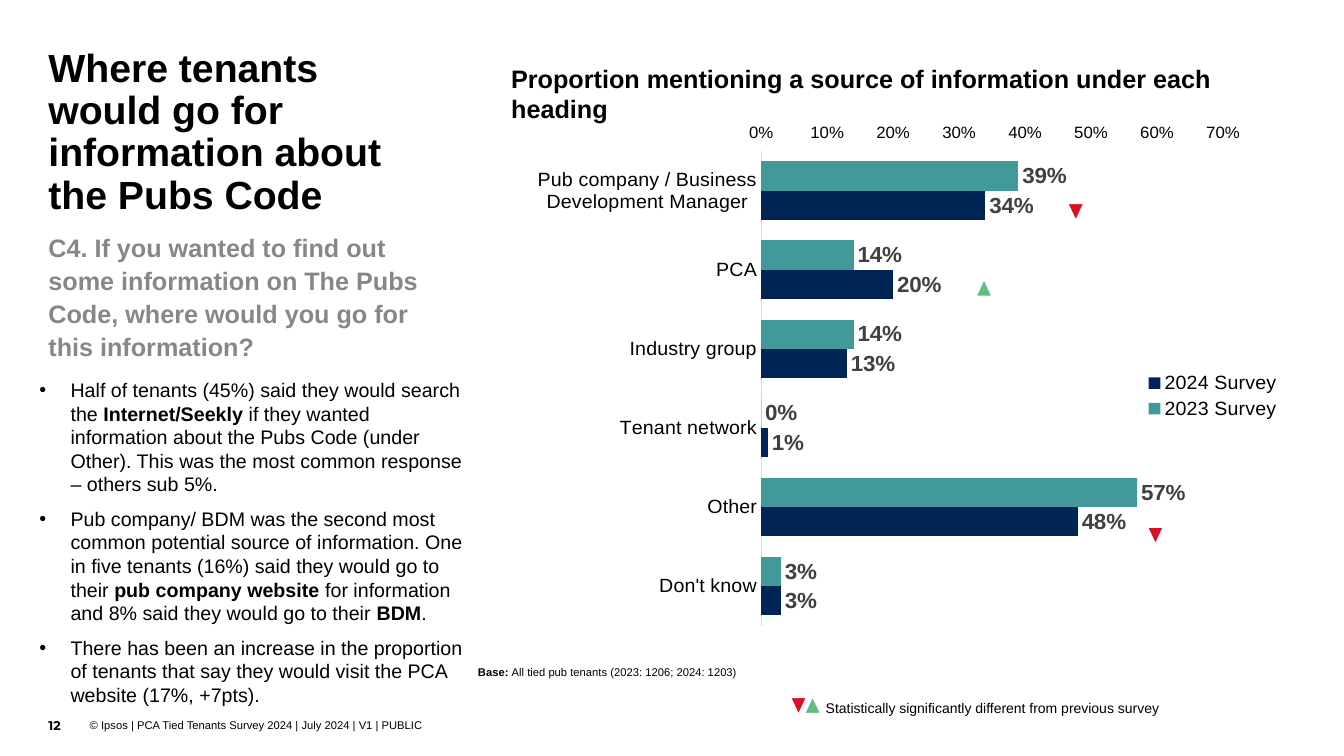
from dataclasses import dataclass

from lxml import etree
from pptx import Presentation
from pptx import util as u
from pptx.chart.chart import Chart
from pptx.chart.data import CategoryChartData
from pptx.dml.color import RGBColor
from pptx.enum import chart as charts, shapes, text
from pptx.oxml import parse_xml
from pptx.oxml.ns import nsdecls, qn
from pptx.slide import Slide


@dataclass(frozen=True)
class Theme:
    font: str = "Arial"
    number_font: str = "Montserrat"
    black: str = "000000"
    white: str = "FFFFFF"
    grey: str = "878787"
    label: str = "404040"
    axis: str = "D9D9D9"
    navy: str = "002554"
    teal: str = "419999"
    red: str = "D71023"
    green: str = "5FBD83"
    title: float = 28
    heading: float = 18
    data_label: float = 16
    body: float = 14
    tick: float = 12
    key: float = 10
    page: float = 9
    note: float = 8


@dataclass(frozen=True)
class Survey:
    name: str
    values: tuple[int, ...]
    color: str


@dataclass(frozen=True)
class Marker:
    left: float
    top: float
    rising: bool


THEME = Theme()
BULLET_INDENT = 0.31
PERCENT = "0\\%"
CHART_BOX = (4.85, 1.23, 7.96, 5.28)
PLOT_BOX = (2.7, 0.16, 4.58, 4.81)  # inches inside the chart

SOURCES = ("Pub company / Business Development Manager", "PCA", "Industry group",
           "Tenant network", "Other", "Don't know")
SURVEYS = (
    Survey("2023 Survey", (39, 14, 14, 0, 57, 3), THEME.teal),
    Survey("2024 Survey", (34, 20, 13, 1, 48, 3), THEME.navy),
)
MARKERS = (
    Marker(10.59, 2.02, False),
    Marker(9.68, 2.77, True),
    Marker(11.38, 5.23, False),
    Marker(7.84, 6.92, False),
    Marker(7.98, 6.91, True),
)
# Double asterisks switch bold on and off
FINDINGS = (
    "Half of tenants (45%) said they would search the **Internet/Seekly **if they wanted "
    "information about the Pubs Code (under Other). This was the most common response "
    "– others sub 5%.",
    "Pub company/ BDM was the second most common potential source of information. One in "
    "five tenants (16%) said they would go to their **pub company website **for "
    "information and 8% said they would go to their **BDM**.",
    "There has been an increase in the proportion of tenants that say they would visit "
    "the PCA website (17%, +7pts).",
)


def set_font(font, size: float, color: str = THEME.black, bold: bool = False,
             name: str = THEME.font) -> None:
    font.name, font.size, font.bold = name, u.Pt(size), bold
    font.color.rgb = RGBColor.from_string(color)


def add_text(slide: Slide, box: tuple[float, float, float, float], *paragraphs: str,
             size: float, color: str = THEME.black, bold: bool = False,
             name: str = THEME.font, line_spacing: float = 1.0, gap: float = 0,
             anchor=text.MSO_ANCHOR.TOP, bullets: bool = False) -> None:
    frame = slide.shapes.add_textbox(*map(u.Inches, box)).text_frame
    frame.word_wrap, frame.vertical_anchor = True, anchor
    frame.margin_left = frame.margin_top = frame.margin_right = frame.margin_bottom = 0
    for index, content in enumerate(paragraphs):
        paragraph = frame.add_paragraph() if index else frame.paragraphs[0]
        if bullets:
            properties = paragraph._p.get_or_add_pPr()
            properties.set("marL", str(u.Inches(BULLET_INDENT)))
            properties.set("indent", str(-u.Inches(BULLET_INDENT)))
            etree.SubElement(properties, qn("a:buFont")).set("typeface", THEME.font)
            etree.SubElement(properties, qn("a:buChar")).set("char", "•")
        paragraph.line_spacing = line_spacing
        paragraph.space_before = u.Pt(gap if index else 0)
        paragraph.space_after = u.Pt(gap)
        for part, words in enumerate(content.split("**")):
            if words:
                run = paragraph.add_run()
                run.text = words
                set_font(run.font, size, color, bold or part % 2 == 1, name)


def add_marker(slide: Slide, marker: Marker) -> None:
    triangle = slide.shapes.add_shape(
        shapes.MSO_SHAPE.ISOSCELES_TRIANGLE,
        *map(u.Inches, (marker.left, marker.top, 0.16, 0.17)))
    triangle.shadow.inherit = False
    triangle.fill.solid()
    triangle.fill.fore_color.rgb = RGBColor.from_string(
        THEME.green if marker.rising else THEME.red)
    triangle.line.color.rgb = RGBColor.from_string(THEME.white)
    triangle.line.width = u.Pt(1)
    if not marker.rising:
        triangle._element.spPr.find(qn("a:xfrm")).set("flipV", "1")


def set_plot_area(chart: Chart) -> None:
    plot_area = chart._chartSpace.chart.plotArea
    for layout in plot_area.findall(qn("c:layout")):
        plot_area.remove(layout)
    width, height = CHART_BOX[2:]
    sizes = "".join(f'<c:{key} val="{length / whole:.4f}"/>' for key, length, whole
                    in zip("xywh", PLOT_BOX, (width, height, width, height)))
    plot_area.insert(0, parse_xml(
        f'<c:layout {nsdecls("c")}><c:manualLayout><c:layoutTarget val="inner"/>'
        f'<c:xMode val="edge"/><c:yMode val="edge"/>{sizes}</c:manualLayout></c:layout>'))


def add_survey_chart(slide: Slide) -> None:
    data = CategoryChartData(number_format=PERCENT)
    data.categories = SOURCES
    for survey in SURVEYS:
        data.add_series(survey.name, survey.values)
    chart = slide.shapes.add_chart(
        charts.XL_CHART_TYPE.BAR_CLUSTERED, *map(u.Inches, CHART_BOX), data).chart
    set_font(chart.font, THEME.key)
    chart.has_title = False
    set_plot_area(chart)

    # Bars and their labels
    plot = chart.plots[0]
    plot.gap_width, plot.overlap, plot.vary_by_categories = 70, 0, False
    for series, survey in zip(plot.series, SURVEYS):
        series.format.fill.solid()
        series.format.fill.fore_color.rgb = RGBColor.from_string(survey.color)
        series.invert_if_negative = False
        labels = series.data_labels
        set_font(labels.font, THEME.data_label, THEME.label, bold=True)
        labels.number_format, labels.number_format_is_linked = PERCENT, False
        labels.position = charts.XL_LABEL_POSITION.OUTSIDE_END
        labels.show_value = True

    # Axes
    category_axis, value_axis = chart.category_axis, chart.value_axis
    category_axis.reverse_order = True
    category_axis.major_tick_mark = charts.XL_TICK_MARK.NONE
    category_axis.format.line.color.rgb = RGBColor.from_string(THEME.axis)
    category_axis.format.line.width = u.Pt(0.75)
    set_font(category_axis.tick_labels.font, THEME.body)
    value_axis.minimum_scale, value_axis.maximum_scale, value_axis.major_unit = 0, 70, 10
    value_axis.has_major_gridlines = False
    value_axis.format.line.fill.background()
    set_font(value_axis.tick_labels.font, THEME.tick)
    value_axis.tick_labels.number_format = PERCENT
    value_axis.tick_labels.number_format_is_linked = False

    # Legend
    chart.has_legend = True
    chart.legend.position = charts.XL_LEGEND_POSITION.RIGHT
    chart.legend.include_in_layout = False
    set_font(chart.legend.font, THEME.body)


def main() -> None:
    presentation = Presentation()
    presentation.slide_width, presentation.slide_height = u.Inches(13.33), u.Inches(7.5)
    slide = presentation.slides.add_slide(presentation.slide_layouts[6])

    # Footer
    add_text(slide, (0.89, 7.13, 3.37, 0.13),
             "© Ipsos | PCA Tied Tenants Survey 2024 | July 2024 | V1 | PUBLIC",
             size=THEME.note, anchor=text.MSO_ANCHOR.MIDDLE)
    add_text(slide, (0.48, 6.87, 0.33, 0.4), "12", size=THEME.page, bold=True,
             name=THEME.number_font, anchor=text.MSO_ANCHOR.BOTTOM)

    # Left column
    add_text(slide, (0.48, 0.48, 3.88, 1.21),
             "Where tenants would go for information about the Pubs Code",
             size=THEME.title, bold=True, line_spacing=0.9)
    add_text(slide, (0.48, 2.27, 3.88, 1.31),
             "C4. If you wanted to find out some information on The Pubs Code, "
             "where would you go for this information?",
             size=THEME.heading, color=THEME.grey, bold=True, line_spacing=1.1, gap=4)
    add_text(slide, (0.39, 3.75, 4.22, 3.64), *FINDINGS,
             size=THEME.body, gap=4, bullets=True)

    # Chart with its heading, base and significance key
    add_text(slide, (5.07, 0.63, 7.56, 0.61),
             "Proportion mentioning a source of information under each heading",
             size=THEME.heading, bold=True, gap=4)
    add_survey_chart(slide)
    for marker in MARKERS:
        add_marker(slide, marker)
    add_text(slide, (4.74, 6.59, 8.82, 0.43),
             "**Base: **All tied pub tenants (2023: 1206; 2024: 1203)",
             size=THEME.note, line_spacing=1.1, gap=4)
    add_text(slide, (8.19, 6.92, 3.77, 0.17),
             "Statistically significantly different from previous survey",
             size=THEME.key, line_spacing=1.1, gap=4)

    presentation.save("out.pptx")


if __name__ == "__main__":
    main()
